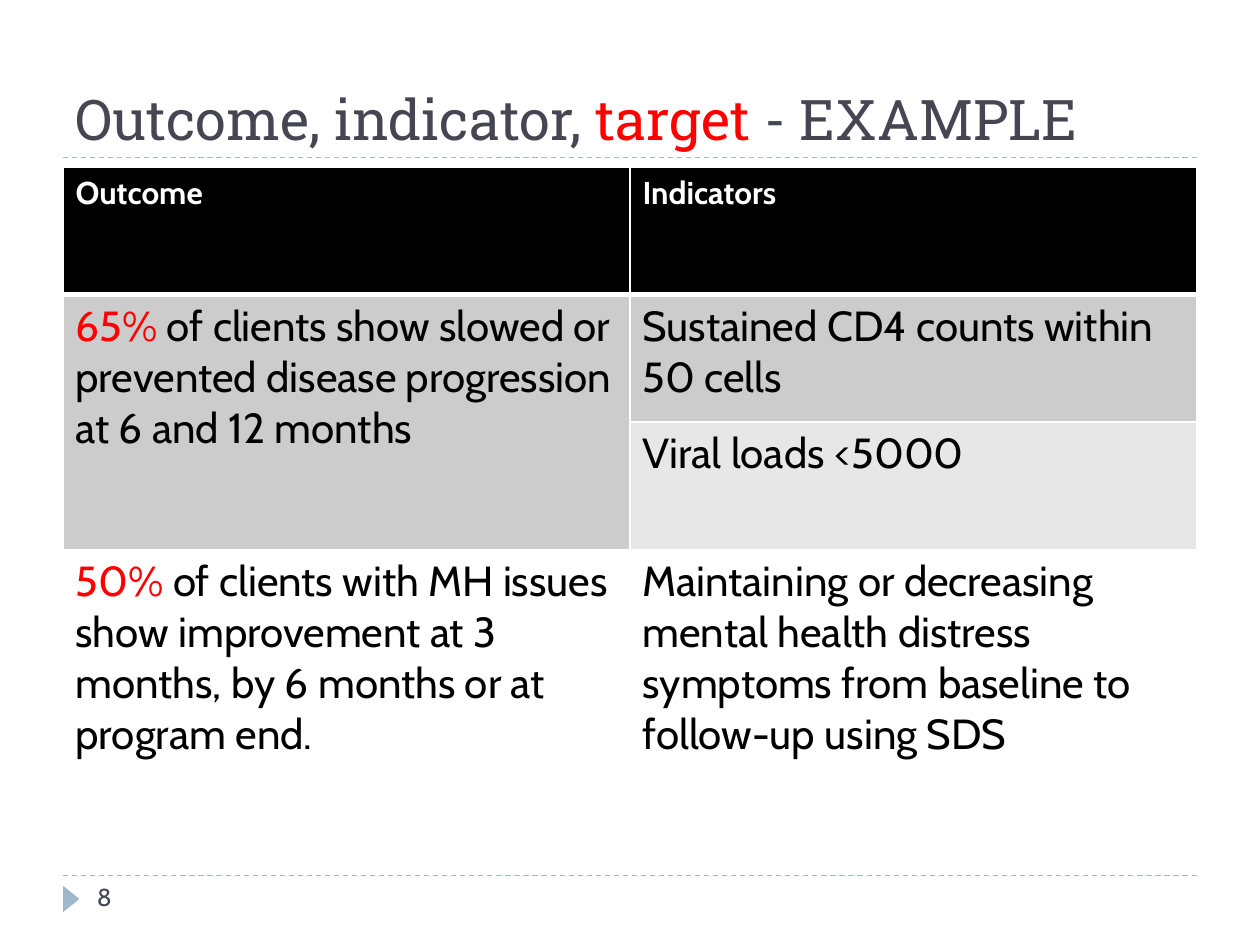
import pptx
import pptx.util
import pptx.dml.color
import pptx.enum.dml
import pptx.enum.shapes
import pptx.enum.text
import pptx.oxml
import pptx.oxml.ns

PX = 9144  # EMU per px, 100 px to the inch
ACCENT, INK, RED = "9FB8CD", "464653", "FF0000"
BLACK, WHITE = "000000", "FFFFFF"


def px(length):
    return pptx.util.Emu(length * PX)


def color(hex_code):
    return pptx.dml.color.RGBColor.from_string(hex_code)


class Deck:
    heading_font = "Roboto Slab"
    body_font = "Cabin"

    def __init__(self, width, height):
        self.prs = pptx.Presentation()
        self.prs.slide_width, self.prs.slide_height = px(width), px(height)
        self.slide = self.prs.slides.add_slide(self.prs.slide_layouts[6])

    def rule(self, x1, x2, y):
        line = self.slide.shapes.add_connector(
            pptx.enum.shapes.MSO_CONNECTOR.STRAIGHT, px(x1), px(y), px(x2), px(y))
        line.line.color.rgb = color(ACCENT)
        line.line.width = pptx.util.Pt(0.75)
        line.line.dash_style = pptx.enum.dml.MSO_LINE.DASH
        line._element.spPr.append(pptx.oxml.parse_xml(
            f'<a:effectLst {pptx.oxml.ns.nsdecls("a")}/>'))

    def marker(self, x, y, w, h):
        triangle = self.slide.shapes.add_shape(
            pptx.enum.shapes.MSO_SHAPE.ISOSCELES_TRIANGLE, px(x), px(y), px(w), px(h))
        triangle.rotation = 90
        triangle.shadow.inherit = False
        triangle.fill.solid()
        triangle.fill.fore_color.rgb = color(ACCENT)
        triangle.line.fill.background()

    def add_runs(self, frame, runs, size, font, bold=False):
        paragraph = frame.paragraphs[0]
        paragraph.font.size = pptx.util.Pt(size)
        paragraph.font.name = font
        paragraph.font.bold = bold
        for words, hex_code in runs:
            run = paragraph.add_run()
            run.text = words
            run.font.color.rgb = color(hex_code)

    def text(self, x, y, w, h, runs, size, font,
             anchor=pptx.enum.text.MSO_ANCHOR.TOP):
        frame = self.slide.shapes.add_textbox(px(x), px(y), px(w), px(h)).text_frame
        frame.word_wrap = True
        frame.vertical_anchor = anchor
        self.add_runs(frame, runs, size, font)

    def table(self, x, y, columns, heights):
        grid = self.slide.shapes.add_table(
            len(heights), len(columns), px(x), px(y),
            px(sum(columns)), px(sum(heights))).table
        for column, width in zip(grid.columns, columns):
            column.width = px(width)
        for row, height in zip(grid.rows, heights):
            row.height = px(height)
        return grid

    def cell(self, cell, fill, runs, header=False, top=1, bottom=1):
        self.add_runs(cell.text_frame, runs, 18 if header else 24,
                      self.body_font, header)
        # Borders come before the fill in the cell properties
        properties = cell._tc.get_or_add_tcPr()
        for side, points in (("L", 1), ("R", 1), ("T", top), ("B", bottom)):
            properties.append(pptx.oxml.parse_xml(
                f'<a:ln{side} {pptx.oxml.ns.nsdecls("a")} w="{points * 12700}">'
                f'<a:solidFill><a:srgbClr val="{WHITE}"/></a:solidFill></a:ln{side}>'))
        cell.fill.solid()
        cell.fill.fore_color.rgb = color(fill)


def main():
    deck = Deck(1000, 750)

    # Dashed rules and footer marker
    for y in (695, 125):
        deck.rule(50, 950, y)
    deck.marker(46, 707, 21, 13)

    # Title
    deck.text(50, 17, 900, 108,
              [("Outcome, indicator, ", INK), ("target", RED), (" - EXAMPLE", INK)],
              32, deck.heading_font, pptx.enum.text.MSO_ANCHOR.BOTTOM)

    # Outcomes and their indicators; None continues the cell above
    rows = [
        [(BLACK, [("Outcome", WHITE)]), (BLACK, [("Indicators", WHITE)])],
        [("CCCCCC", [("65%", RED),
                     (" of clients show slowed or prevented disease progression "
                      "at 6 and 12 months", BLACK)]),
         ("CCCCCC", [("Sustained CD4 counts within 50 cells", BLACK)])],
        [None, ("E7E7E7", [("Viral loads <5000", BLACK)])],
        [(WHITE, [("50% ", RED),
                  ("of clients with MH issues show improvement at 3 months, "
                   "by 6 months or at program end.", BLACK)]),
         (WHITE, [("Maintaining or decreasing mental health distress symptoms "
                   "from baseline to follow-up using SDS", BLACK)])],
    ]
    outcomes = deck.table(50, 133, [450, 450], [101, 101, 101, 248])
    for r, row in enumerate(rows):
        for c, content in enumerate(row):
            if content is None:
                outcomes.cell(r - 1, c).merge(outcomes.cell(r, c))
            else:
                deck.cell(outcomes.cell(r, c), *content, header=r == 0,
                          top=3 if r == 1 else 1, bottom=3 if r == 0 else 1)

    # Slide number
    deck.text(67, 695, 217, 40, [("8", INK)], 14, deck.body_font)

    deck.prs.save("out.pptx")


if __name__ == "__main__":
    main()
